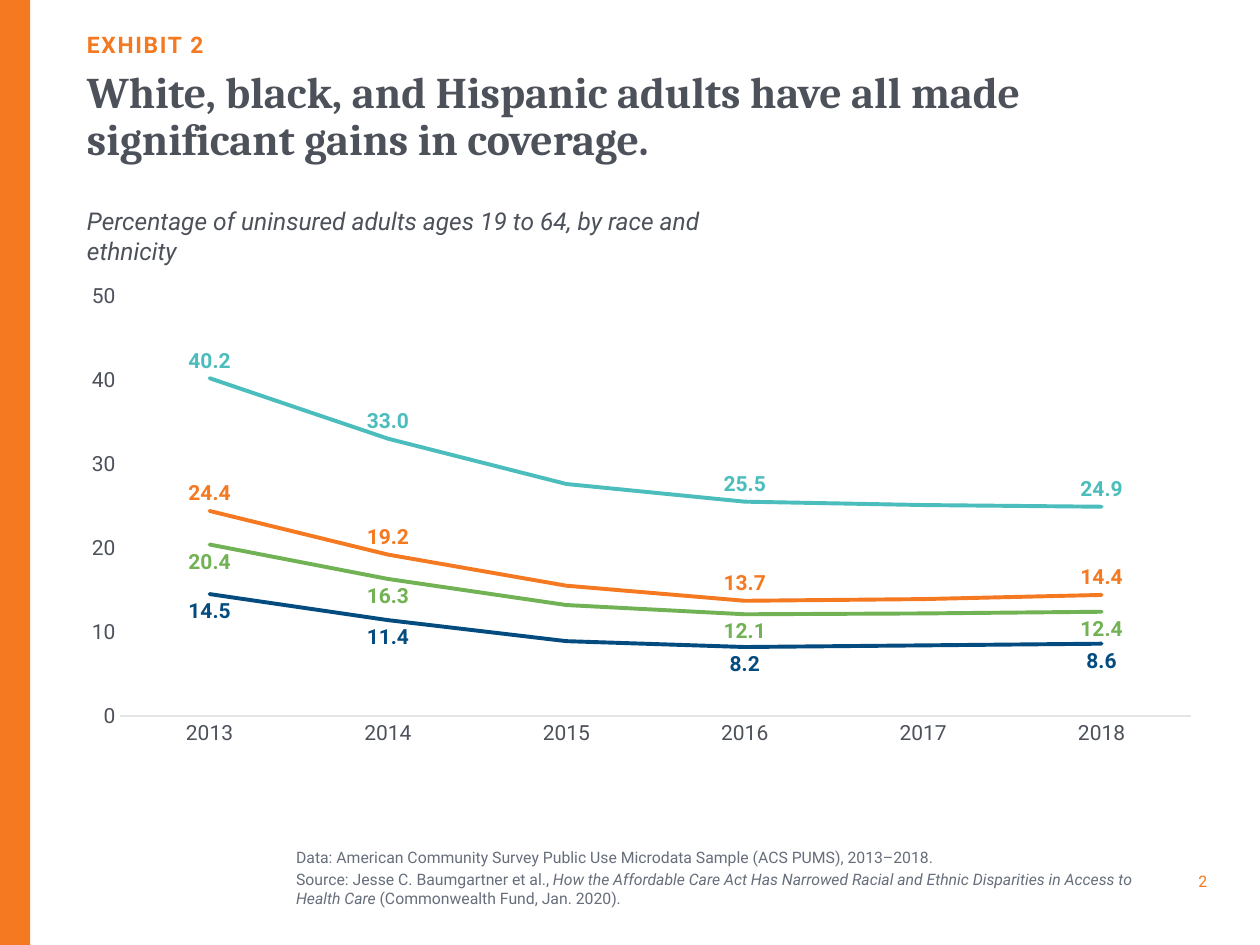
from lxml import etree
from pptx import Presentation
from pptx.chart.data import CategoryChartData
from pptx.dml.color import RGBColor
from pptx.enum.chart import XL_CHART_TYPE, XL_LABEL_POSITION, XL_MARKER_STYLE, XL_TICK_MARK
from pptx.enum.shapes import MSO_SHAPE
from pptx.enum.text import MSO_ANCHOR, PP_ALIGN
from pptx.oxml.ns import qn
from pptx.util import Inches, Pt

ABOVE, BELOW = XL_LABEL_POSITION.ABOVE, XL_LABEL_POSITION.BELOW
LEFT, RIGHT = PP_ALIGN.LEFT, PP_ALIGN.RIGHT
TOP, MIDDLE, BOTTOM = MSO_ANCHOR.TOP, MSO_ANCHOR.MIDDLE, MSO_ANCHOR.BOTTOM
NO_TICK = XL_TICK_MARK.NONE

BODY, HEADING = "Roboto", "Cambria"
COLORS = {
    "orange": "F47920", "text": "4C515A", "note": "676E7B", "axis": "E3E5E7",
    "green": "71B254", "teal": "4ABDBC", "navy": "044C7F",
}
YEARS = ["2013", "2014", "2015", "2016", "2017", "2018"]
UNLABELLED = (YEARS.index("2015"), YEARS.index("2017"))
SERIES = [
    ("All", (20.4, 16.3, 13.2, 12.1, 12.2, 12.4), "green", BELOW),
    ("Black", (24.4, 19.2, 15.5, 13.7, 13.9, 14.4), "orange", ABOVE),
    ("Hispanic", (40.2, 33, 27.6, 25.5, 25.1, 24.9), "teal", ABOVE),
    ("White", (14.5, 11.4, 8.9, 8.2, 8.4, 8.6), "navy", BELOW),
]


def rgb(name):
    return RGBColor.from_string(COLORS[name])


def style_font(font, size, color, name=BODY, bold=False, italic=False):
    font.size, font.name, font.bold, font.italic = Pt(size), name, bold, italic
    font.color.rgb = rgb(color)


def add_text(page, place, paragraphs, size, color, name=BODY, bold=False,
             anchor=MIDDLE, align=LEFT, gap=0, line_spacing=1.0, tracking=0):
    """Each paragraph is a list of (text, italic) spans."""
    frame = page.shapes.add_textbox(*map(Inches, place)).text_frame
    frame.word_wrap = True
    frame.vertical_anchor = anchor
    frame.margin_left = frame.margin_right = frame.margin_top = frame.margin_bottom = 0
    for number, spans in enumerate(paragraphs):
        para = frame.add_paragraph() if number else frame.paragraphs[0]
        para.alignment = align
        para.line_spacing = line_spacing
        if number:
            para.space_before = Pt(gap)
        for text, italic in spans:
            span = para.add_run()
            span.text = text
            style_font(span.font, size, color, name, bold, italic)
            if tracking:
                span._r.get_or_add_rPr().set("spc", str(tracking * 100))


def add_side_bar(page):
    bar = page.shapes.add_shape(MSO_SHAPE.RECTANGLE, 0, 0, Inches(0.24), Inches(7.5))
    bar.shadow.inherit = False
    bar.fill.solid()
    bar.fill.fore_color.rgb = rgb("orange")
    bar.line.fill.background()


def set_plot_area(chart, x, y, width, height):
    """Fix the inner plot area as fractions of the chart."""
    plot_area = chart._chartSpace.chart.plotArea
    for old in plot_area.findall(qn("c:layout")):
        plot_area.remove(old)
    layout = etree.Element(qn("c:layout"))
    manual = etree.SubElement(layout, qn("c:manualLayout"))
    settings = [("layoutTarget", "inner"), ("xMode", "edge"), ("yMode", "edge"),
                ("x", x), ("y", y), ("w", width), ("h", height)]
    for tag, value in settings:
        etree.SubElement(manual, qn(f"c:{tag}")).set("val", str(value))
    plot_area.insert(0, layout)


def hide_labels(labels, points):
    for position, point in enumerate(points):
        label = etree.Element(qn("c:dLbl"))
        etree.SubElement(label, qn("c:idx")).set("val", str(point))
        etree.SubElement(label, qn("c:delete")).set("val", "1")
        labels._element.insert(position, label)


def style_series(series, color, position):
    series.smooth = False
    series.marker.style = XL_MARKER_STYLE.NONE
    line = series.format.line
    line.width = Pt(2.25)
    line.color.rgb = rgb(color)
    line._ln.set("cap", "rnd")
    labels = series.data_labels
    labels.show_value = True
    labels.number_format = "#,##0.0"
    labels.number_format_is_linked = False
    labels.position = position
    style_font(labels.font, 12, color, bold=True)
    hide_labels(labels, UNLABELLED)


def add_line_chart(page, place):
    data = CategoryChartData()
    data.categories = YEARS
    for name, values, _, _ in SERIES:
        data.add_series(name, values)
    chart = page.shapes.add_chart(XL_CHART_TYPE.LINE, *map(Inches, place), data).chart
    chart.has_title = chart.has_legend = False
    style_font(chart.font, 14, "text")
    set_plot_area(chart, 0.03, 0.02, 0.96, 0.89)

    # Axes
    years, percent = chart.category_axis, chart.value_axis
    for axis in (years, percent):
        axis.major_tick_mark = axis.minor_tick_mark = NO_TICK
        axis.has_major_gridlines = False
        style_font(axis.tick_labels.font, 12, "text")
    years.format.line.width = Pt(0.75)
    years.format.line.color.rgb = rgb("axis")
    percent.format.line.fill.background()
    percent.minimum_scale, percent.maximum_scale, percent.major_unit = 0, 50, 10
    percent.tick_labels.number_format = "0"
    percent.tick_labels.number_format_is_linked = False

    # Lines
    plot = chart.plots[0]
    plot.vary_by_categories = False
    for series, (_, _, color, position) in zip(plot.series, SERIES):
        style_series(series, color, position)


def main():
    deck = Presentation()
    deck.slide_width, deck.slide_height = Inches(10), Inches(7.5)
    page = deck.slides.add_slide(deck.slide_layouts[6])
    add_side_bar(page)

    # Headings
    add_text(page, (0.69, 0.19, 8.85, 0.27), [[("EXHIBIT 2", False)]], 13, "orange",
             bold=True, anchor=BOTTOM, tracking=1)
    title = "White, black, and Hispanic adults have all made significant gains in coverage."
    add_text(page, (0.69, 0.56, 8.85, 1.3), [[(title, False)]], 25, "text",
             name=HEADING, bold=True, anchor=TOP, line_spacing=0.9)

    # Chart with its caption
    add_line_chart(page, (0.69, 2.25, 8.85, 3.77))
    caption = "Percentage of uninsured adults ages 19 to 64, by race and ethnicity"
    add_text(page, (0.69, 1.75, 5.38, 0.24), [[(caption, True)]], 14, "text")

    # Sources and page number
    notes = [
        [("Data: American Community Survey Public Use Microdata Sample (ACS PUMS), "
          "2013–2018.", False)],
        [("Source: Jesse C. Baumgartner et al., ", False),
         ("How the Affordable Care Act Has Narrowed Racial and Ethnic Disparities "
          "in Access to Health Care ", True),
         ("(Commonwealth Fund, Jan. 2020).", False)],
    ]
    add_text(page, (2.35, 6.54, 6.92, 0.85), notes, 9, "note", gap=1.8)
    add_text(page, (9.27, 6.88, 0.31, 0.22), [[("2", False)]], 9, "orange", align=RIGHT)

    deck.save("out.pptx")


if __name__ == "__main__":
    main()
